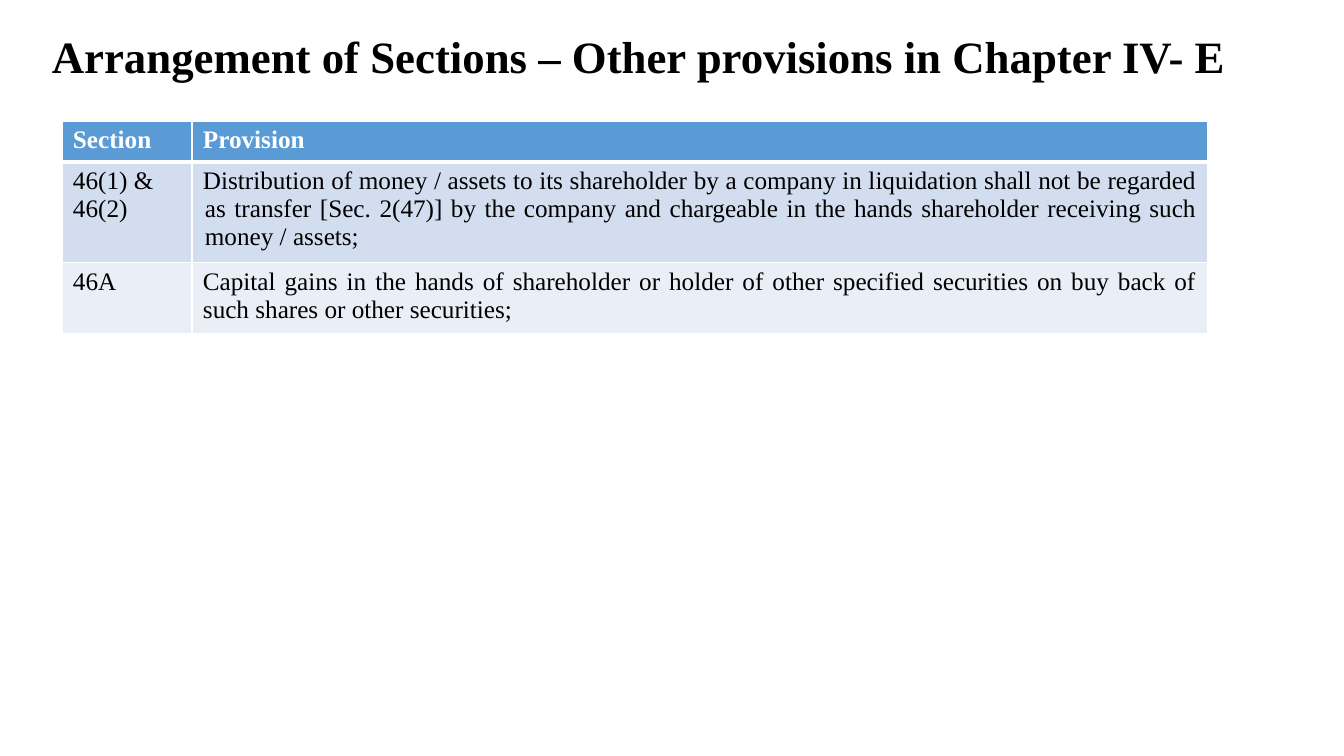
from pptx import Presentation
from pptx.dml.color import RGBColor
from pptx.enum.text import MSO_ANCHOR, PP_ALIGN
from pptx.oxml.ns import qn
from pptx.util import Emu, Pt
from lxml.etree import SubElement

PX = 914400 / 100.8
FONT = "Times New Roman"
BLACK = RGBColor(0x00, 0x00, 0x00)
WHITE = RGBColor(0xFF, 0xFF, 0xFF)
HEADER_BLUE = RGBColor(0x5B, 0x9B, 0xD5)
BAND_DARK = RGBColor(0xD2, 0xDE, 0xEF)
BAND_LIGHT = RGBColor(0xEA, 0xEF, 0xF7)


def px(n):
    return Emu(round(n * PX))


def write(p, text, size, color, bold):
    r = p.add_run()
    r.text = text
    r.font.color.rgb = color
    for name, value in dict(name=FONT, size=Pt(size), bold=bold).items():
        setattr(r.font, name, value)


prs = Presentation()
prs.slide_width, prs.slide_height = px(1344), px(756)
s = prs.slides.add_slide(prs.slide_layouts[6])

# Title
title = s.shapes.add_textbox(px(42), px(11), px(1202), px(96))
tf = title.text_frame
tf.word_wrap = True
tf.vertical_anchor = MSO_ANCHOR.MIDDLE
p = tf.paragraphs[0]
p.line_spacing = 0.9
write(p, "Arrangement of Sections – Other provisions in Chapter IV- E", 32, BLACK, True)

# Table of provisions
ROWS = [
    ("Section", "Provision"),
    ("46(1) & 46(2)",
     "Distribution of money / assets to its shareholder by a company in liquidation "
     "shall not be regarded as transfer [Sec. 2(47)] by the company and chargeable in "
     "the hands shareholder receiving such money / assets;"),
    ("46A",
     "Capital gains in the hands of shareholder or holder of other specified securities "
     "on buy back of such shares or other securities;"),
]
FILLS = [HEADER_BLUE, BAND_DARK, BAND_LIGHT]
COLUMN_WIDTHS = [130, 1016]
ROW_HEIGHT = 41
MARGINS = dict(margin_left=11, margin_right=11, margin_top=5, margin_bottom=5)

table = s.shapes.add_table(len(ROWS), len(COLUMN_WIDTHS), px(62), px(121),
                           px(sum(COLUMN_WIDTHS)), px(ROW_HEIGHT * len(ROWS))).table
for column, width in zip(table.columns, COLUMN_WIDTHS):
    column.width = px(width)

for i, (row, fill) in enumerate(zip(ROWS, FILLS)):
    table.rows[i].height = px(ROW_HEIGHT)
    header = i == 0
    for j, text in enumerate(row):
        cell = table.cell(i, j)
        for name, value in MARGINS.items():
            setattr(cell, name, px(value))
        p = cell.text_frame.paragraphs[0]
        write(p, text, 18, WHITE if header else BLACK, header)
        if j == 1 and not header:
            p.alignment = PP_ALIGN.JUSTIFY

        # Borders come before the fill in the cell properties
        tcPr = cell._tc.get_or_add_tcPr()
        widths = dict(lnL=1, lnR=1, lnT=3 if i == 1 else 1, lnB=3 if header else 1)
        for side, width in widths.items():
            ln = SubElement(tcPr, qn(f"a:{side}"), w=str(Pt(width)))
            SubElement(SubElement(ln, qn("a:solidFill")), qn("a:srgbClr"), val=str(WHITE))
        cell.fill.solid()
        cell.fill.fore_color.rgb = fill

# Hanging indent of the first provision
pPr = table.cell(1, 1).text_frame.paragraphs[0]._p.get_or_add_pPr()
pPr.set("marL", str(px(2)))
pPr.set("indent", str(px(-2)))

prs.save("out.pptx")
